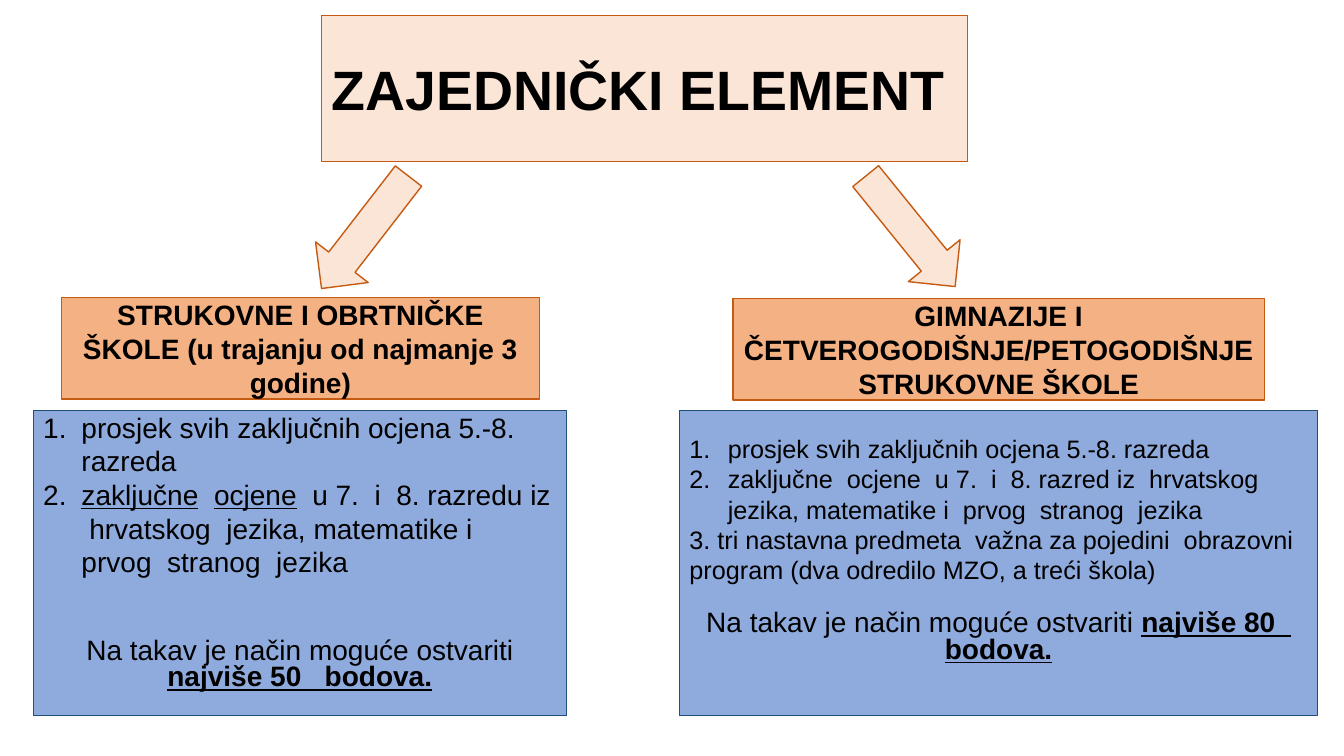
"""Build the slide on the common element of school admission scoring."""
from dataclasses import dataclass

from lxml.etree import SubElement
from pptx import Presentation
from pptx.dml.color import RGBColor
from pptx.enum.shapes import MSO_SHAPE
from pptx.enum.text import MSO_ANCHOR, PP_ALIGN
from pptx.oxml.ns import qn
from pptx.util import Inches, Pt


@dataclass(frozen=True)
class Theme:
    """Colours and type sizes of the slide."""
    font: str = "Arial"
    text: str = "000000"
    pale: str = "FBE5D6"
    orange: str = "F4B183"
    rust: str = "C55A11"
    blue: str = "8FAADC"
    navy: str = "1F4E79"
    title_size: float = 39.6
    body_size: float = 20
    small_size: float = 18


class ElementSlide:
    """Holds the theme and the current slide."""

    def __init__(self, presentation, theme):
        """Add a title-only slide."""
        self.theme = theme
        self.slide = presentation.slides.add_slide(presentation.slide_layouts[5])

    def paint(self, shape, fill, line, width=1):
        """Set the fill and outline of a shape."""
        shape.fill.solid()
        shape.fill.fore_color.rgb = RGBColor.from_string(fill)
        shape.line.color.rgb = RGBColor.from_string(line)
        shape.line.width = Pt(width)

    def preset(self, kind, place, fill, line):
        """Add a painted preset shape without a shadow."""
        shape = self.slide.shapes.add_shape(kind, *map(Inches, place))
        shape.shadow.inherit = False
        self.paint(shape, fill, line)
        return shape

    def add_words(self, paragraph, wording, size, bold=False, underline=False):
        """Add one run to a paragraph."""
        run = paragraph.add_run()
        run.text = wording
        font = run.font
        font.name, font.size = self.theme.font, Pt(size)
        font.bold, font.underline = bold, underline
        font.color.rgb = RGBColor.from_string(self.theme.text)

    def title(self, wording, place):
        """Place and format the title."""
        heading = self.slide.shapes.title
        heading.left, heading.top, heading.width, heading.height = map(Inches, place)
        self.paint(heading, self.theme.pale, self.theme.rust, 0.75)
        heading.text_frame.vertical_anchor = MSO_ANCHOR.MIDDLE
        heading.text_frame.word_wrap = True
        paragraph = heading.text_frame.paragraphs[0]
        paragraph.alignment = PP_ALIGN.LEFT
        self.add_words(paragraph, wording, self.theme.title_size, bold=True)

    def arrow(self, left, top, rotation):
        """Add a turned block arrow."""
        arrow = self.preset(MSO_SHAPE.DOWN_ARROW, (left, top, 0.66, 1.41),
                            self.theme.pale, self.theme.rust)
        arrow.rotation = rotation

    def school(self, wording, place):
        """Add the heading box of a school type."""
        school = self.preset(MSO_SHAPE.RECTANGLE, place, self.theme.orange, self.theme.rust)
        school.text_frame.word_wrap = True
        school.text_frame.vertical_anchor = MSO_ANCHOR.MIDDLE
        paragraph = school.text_frame.paragraphs[0]
        paragraph.alignment = PP_ALIGN.CENTER
        self.add_words(paragraph, wording, self.theme.body_size, bold=True)

    def number(self, paragraph):
        """Give a paragraph automatic numbering with a hanging indent."""
        properties = paragraph._p.get_or_add_pPr()
        properties.set("marL", str(Inches(0.38)))
        properties.set("indent", str(Inches(-0.38)))
        SubElement(properties, qn("a:buFont"), typeface="+mj-lt")
        SubElement(properties, qn("a:buAutoNum"), type="arabicPeriod")

    def criteria(self, place, inset, size, items, points, gap):
        """Add the box of criteria, closed by the points that can be reached."""
        criteria = self.preset(MSO_SHAPE.RECTANGLE, place, self.theme.blue, self.theme.navy)
        frame = criteria.text_frame
        frame.word_wrap = True
        frame.vertical_anchor = MSO_ANCHOR.TOP
        frame.margin_top = Inches(inset)
        for index, (numbered, pieces) in enumerate(items):
            paragraph = frame.add_paragraph() if index else frame.paragraphs[0]
            if numbered:
                self.number(paragraph)
            paragraph.alignment = PP_ALIGN.LEFT
            for wording, underline in pieces:
                self.add_words(paragraph, wording, size, underline=underline)
        closing = frame.add_paragraph()
        closing.alignment = PP_ALIGN.CENTER
        closing.line_spacing = 0.8
        closing.space_before = Pt(gap)
        self.add_words(closing, "Na takav je način moguće ostvariti ", self.theme.body_size)
        self.add_words(closing, points, self.theme.body_size, bold=True, underline=True)


def main():
    """Compose and save the slide."""
    presentation = Presentation()
    presentation.slide_width, presentation.slide_height = Inches(13.33), Inches(7.5)
    theme = Theme()
    page = ElementSlide(presentation, theme)

    page.title("ZAJEDNIČKI ELEMENT", (3.19, 0.15, 6.41, 1.45))
    page.arrow(3.29, 1.6, 37.7)
    page.arrow(8.7, 1.59, 321)
    page.school("STRUKOVNE I OBRTNIČKE ŠKOLE (u trajanju od najmanje 3 godine)",
                (0.61, 2.95, 4.74, 1.01))
    page.school("GIMNAZIJE I ČETVEROGODIŠNJE/PETOGODIŠNJE STRUKOVNE ŠKOLE",
                (7.27, 2.96, 5.27, 1.01))

    average = (True, [("prosjek svih zaključnih ocjena 5.-8. razreda", False)])
    subjects = "iz  hrvatskog  jezika, matematike i  prvog  stranog  jezika"
    vocational_grades = (True, [
        ("zaključne", True), ("  ", False), ("ocjene", True),
        ("  u 7.  i  8. razredu " + subjects, False)])
    grammar_grades = (True, [("zaključne  ocjene  u 7.  i  8. razred " + subjects, False)])
    chosen_subjects = (False, [(
        "3. tri nastavna predmeta  važna za pojedini  obrazovni program "
        "(dva odredilo MZO, a treći škola)", False)])

    page.criteria((0.33, 4.07, 5.29, 3.03), 0, theme.body_size,
                  [average, vocational_grades], "najviše 50   bodova.", 43)
    page.criteria((6.74, 4.07, 6.33, 3.03), 0.23, theme.small_size,
                  [average, grammar_grades, chosen_subjects], "najviše 80   bodova.", 19)

    presentation.save("out.pptx")


if __name__ == "__main__":
    main()
